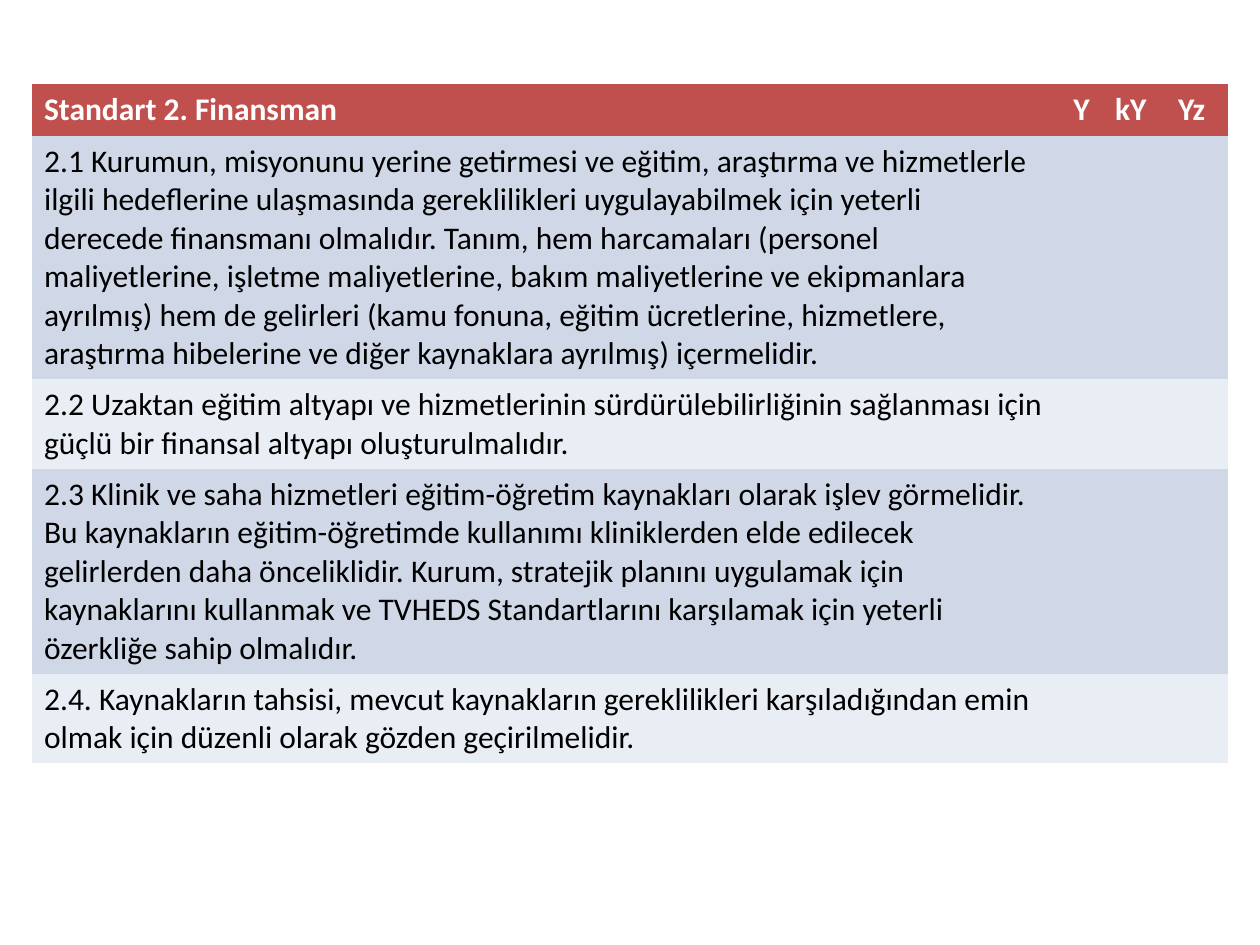
from dataclasses import dataclass
from pptx import Presentation
from pptx.dml.color import RGBColor
from pptx.oxml.ns import qn
from pptx.util import Inches, Pt

PLAIN = "{2D5ABB26-0587-4C30-8999-92F81FD0307C}"
WIDE, HIGH = 10, 7.5


@dataclass(frozen=True)
class Theme:
    font: str = "Calibri"
    size: int = 18
    head: str = "C0504D"
    bands: tuple = ("D0D8E8", "E9EDF4")
    light: str = "FFFFFF"
    dark: str = "000000"


THEME = Theme()
HEAD = ("Standart 2. Finansman", "Y", "kY", "Yz")
ITEMS = (
    "2.1 Kurumun, misyonunu yerine getirmesi ve eğitim, araştırma ve hizmetlerle "
    "ilgili hedeflerine ulaşmasında gereklilikleri uygulayabilmek için yeterli "
    "derecede finansmanı olmalıdır. Tanım, hem harcamaları (personel "
    "maliyetlerine, işletme maliyetlerine, bakım maliyetlerine ve ekipmanlara "
    "ayrılmış) hem de gelirleri (kamu fonuna, eğitim ücretlerine, hizmetlere, "
    "araştırma hibelerine ve diğer kaynaklara ayrılmış) içermelidir.",
    "2.2 Uzaktan eğitim altyapı ve hizmetlerinin sürdürülebilirliğinin sağlanması "
    "için güçlü bir finansal altyapı oluşturulmalıdır.",
    "2.3 Klinik ve saha hizmetleri eğitim-öğretim kaynakları olarak işlev "
    "görmelidir. Bu kaynakların eğitim-öğretimde kullanımı kliniklerden elde "
    "edilecek gelirlerden daha önceliklidir. Kurum, stratejik planını uygulamak "
    "için kaynaklarını kullanmak ve TVHEDS Standartlarını karşılamak için yeterli "
    "özerkliğe sahip olmalıdır.",
    "2.4. Kaynakların tahsisi, mevcut kaynakların gereklilikleri karşıladığından "
    "emin olmak için düzenli olarak gözden geçirilmelidir.",
)
COLS = (8.17, 0.33, 0.5, 0.5)
ROW = 0.41


def fill_cell(cell, text, fill, ink, bold):
    cell.fill.solid()
    cell.fill.fore_color.rgb = RGBColor.from_string(fill)
    if not text:
        return
    run = cell.text_frame.paragraphs[0].add_run()
    run.text = text
    run.font.name = THEME.font
    run.font.size = Pt(THEME.size)
    run.font.bold = bold
    run.font.color.rgb = RGBColor.from_string(ink)


def add_checklist(slide, left, top, width, height):
    rows = [HEAD] + [(item, "", "", "") for item in ITEMS]
    frame = slide.shapes.add_table(
        len(rows), len(COLS),
        Inches(left), Inches(top), Inches(width), Inches(height))
    table = frame.table
    for style in frame.element.iter(qn("a:tableStyleId")):
        style.text = PLAIN
    for col, share in zip(table.columns, COLS):
        col.width = Inches(width * share / sum(COLS))
    for i, texts in enumerate(rows):
        table.rows[i].height = Inches(ROW)
        first = i == 0
        fill = THEME.head if first else THEME.bands[(i - 1) % 2]
        ink = THEME.light if first else THEME.dark
        for j, text in enumerate(texts):
            fill_cell(table.cell(i, j), text, fill, ink, first)
    frame.height = Inches(height)


def main():
    deck = Presentation()
    deck.slide_width, deck.slide_height = Inches(WIDE), Inches(HIGH)
    slide = deck.slides.add_slide(deck.slide_layouts[6])
    add_checklist(slide, 0.025 * WIDE, 0.67, 0.95 * WIDE, 5.31)
    deck.save("out.pptx")


if __name__ == "__main__":
    main()
